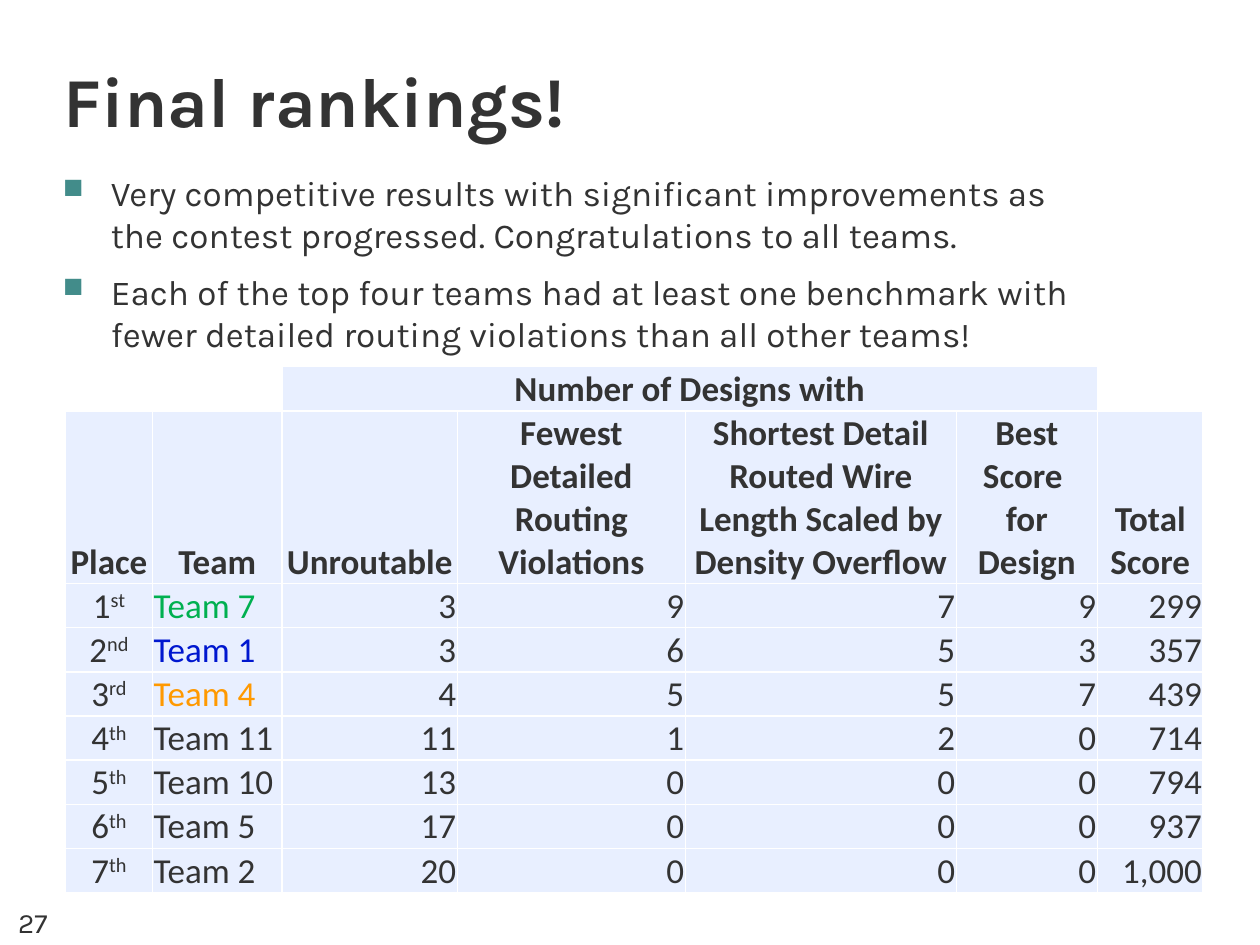
import pptx
import pptx.util
import pptx.dml.color
import pptx.enum.text
import pptx.oxml
import pptx.oxml.ns
import lxml.etree

Inches = pptx.util.Inches
Pt = pptx.util.Pt
RGB = pptx.dml.color.RGBColor
ALIGN = pptx.enum.text.PP_ALIGN
ANCHOR = pptx.enum.text.MSO_ANCHOR
qn = pptx.oxml.ns.qn

INK = RGB(0x33, 0x33, 0x33)
TEAL = RGB(0x42, 0x8C, 0x8A)
PALE = RGB(0xE8, 0xEF, 0xFF)
WHITE = RGB(0xFF, 0xFF, 0xFF)
GREEN = RGB(0x00, 0xB0, 0x50)
BLUE = RGB(0x00, 0x17, 0xCF)
GOLD = RGB(0xFF, 0x99, 0x00)

POINTS = [
    "Very competitive results with significant improvements as\n"
    "the contest progressed. Congratulations to all teams.",
    "Each of the top four teams had at least one benchmark with\n"
    "fewer detailed routing violations than all other teams!",
]
HEADS = ["Place", "Team", "Unroutable", "Fewest Detailed Routing Violations",
         "Shortest Detail Routed Wire Length Scaled by Density Overflow",
         "Best Score \nfor Design", "Total\nScore"]
RANKS = [
    ("1", "st", "Team 7", GREEN, "3", "9", "7", "9", "299"),
    ("2", "nd", "Team 1", BLUE, "3", "6", "5", "3", "357"),
    ("3", "rd", "Team 4", GOLD, "4", "5", "5", "7", "439"),
    ("4", "th", "Team 11", INK, "11", "1", "2", "0", "714"),
    ("5", "th", "Team 10", INK, "13", "0", "0", "0", "794"),
    ("6", "th", "Team 5", INK, "17", "0", "0", "0", "937"),
    ("7", "th", "Team 2", INK, "20", "0", "0", "0", "1,000"),
]
WIDTHS = [0.69, 1.03, 1.39, 1.81, 2.15, 1.12, 0.84]
ROW, HEAD_ROW = 0.35, 1.37


def write(para, text, size=20, font="Calibri", color=INK, bold=False,
          align=ALIGN.LEFT, raised=False):
    para.alignment = align
    for i, line in enumerate(text.split("\n")):
        if i:
            para.add_line_break()
        run = para.add_run()
        run.text = line
        run.font.size = Pt(size)
        run.font.name = font
        run.font.bold = bold
        run.font.color.rgb = color
        if raised:
            run._r.get_or_add_rPr().set("baseline", "30000")


def place(shape, box):
    shape.left, shape.top, shape.width, shape.height = map(Inches, box)


def set_frame(frame, anchor, side=0.1):
    frame.word_wrap = True
    frame.auto_size = pptx.enum.text.MSO_AUTO_SIZE.NONE
    frame.vertical_anchor = anchor
    frame.margin_left = frame.margin_right = Inches(side)
    frame.margin_top = frame.margin_bottom = Inches(0.05)


def add_title(slide, box):
    title = slide.shapes.title
    place(title, box)
    set_frame(title.text_frame, ANCHOR.BOTTOM, 0.5)
    write(title.text_frame.paragraphs[0], "Final rankings!", size=40,
          font="Karla", bold=True)


def add_bullet(para):
    props = para._p.get_or_add_pPr()
    props.set("marL", str(Inches(0.38)))
    props.set("indent", str(-Inches(0.38)))
    shade = lxml.etree.SubElement(props, qn("a:buClr"))
    lxml.etree.SubElement(shade, qn("a:srgbClr")).set("val", str(TEAL))
    lxml.etree.SubElement(props, qn("a:buSzPct")).set("val", "80000")
    lxml.etree.SubElement(props, qn("a:buChar")).set("char", "■")


def add_points(slide, box):
    frame = slide.shapes.add_textbox(*map(Inches, box)).text_frame
    set_frame(frame, ANCHOR.TOP, 0.5)
    for i, text in enumerate(POINTS):
        para = frame.add_paragraph() if i else frame.paragraphs[0]
        add_bullet(para)
        if i:
            para.space_before = Pt(8.5)
        write(para, text, font="Karla")


def add_number(slide, box):
    frame = slide.shapes.add_textbox(*map(Inches, box)).text_frame
    set_frame(frame, ANCHOR.BOTTOM)
    write(frame.paragraphs[0], "27", size=16, font="Karla", align=ALIGN.CENTER)


def style_cell(cell, filled):
    cell.margin_left = cell.margin_right = cell.margin_top = Inches(0.01)
    cell.margin_bottom = 0
    cell.vertical_anchor = ANCHOR.BOTTOM
    props = cell._tc.get_or_add_tcPr()
    for side in ("lnL", "lnR", "lnT", "lnB"):
        line = lxml.etree.SubElement(props, qn("a:" + side))
        line.set("w", str(Pt(1)))
        fill = lxml.etree.SubElement(line, qn("a:solidFill"))
        lxml.etree.SubElement(fill, qn("a:srgbClr")).set("val", str(WHITE))
    if filled:
        cell.fill.solid()
        cell.fill.fore_color.rgb = PALE
    else:
        cell.fill.background()
        cell.text_frame.paragraphs[0].font.size = Pt(20)


def add_ranks(slide, box):
    count = len(RANKS) + 2
    frame = slide.shapes.add_table(count, len(WIDTHS), *map(Inches, box))
    table = frame.table
    table.first_row = table.horz_banding = False
    for col, width in zip(table.columns, WIDTHS):
        col.width = Inches(width)
    for r, row in enumerate(table.rows):
        row.height = Inches(HEAD_ROW if r == 1 else ROW)
        for c, cell in enumerate(row.cells):
            style_cell(cell, r > 0 or 2 <= c <= 5)

    def para(r, c):
        return table.cell(r, c).text_frame.paragraphs[0]

    table.cell(0, 2).merge(table.cell(0, 5))
    write(para(0, 2), "Number of Designs with", bold=True, align=ALIGN.CENTER)
    for c, text in enumerate(HEADS):
        write(para(1, c), text, bold=True, align=ALIGN.CENTER)
    for r, (rank, suffix, team, color, *scores) in enumerate(RANKS, 2):
        write(para(r, 0), rank, align=ALIGN.CENTER)
        write(para(r, 0), suffix, align=ALIGN.CENTER, raised=True)
        write(para(r, 1), team, color=color)
        for c, score in enumerate(scores, 2):
            write(para(r, c), score, align=ALIGN.RIGHT)


def main():
    deck = pptx.Presentation()
    deck.slide_width, deck.slide_height = Inches(10), Inches(7.5)
    slide = deck.slides.add_slide(deck.slide_layouts[5])
    add_title(slide, (0, 0, 10, 1.17))
    add_points(slide, (0, 1.31, 10, 1.63))
    add_number(slide, (0, 7.25, 0.52, 0.25))
    add_ranks(slide, (0.52, 2.91, sum(WIDTHS), ROW * 8 + HEAD_ROW))
    deck.save("out.pptx")


if __name__ == "__main__":
    main()
